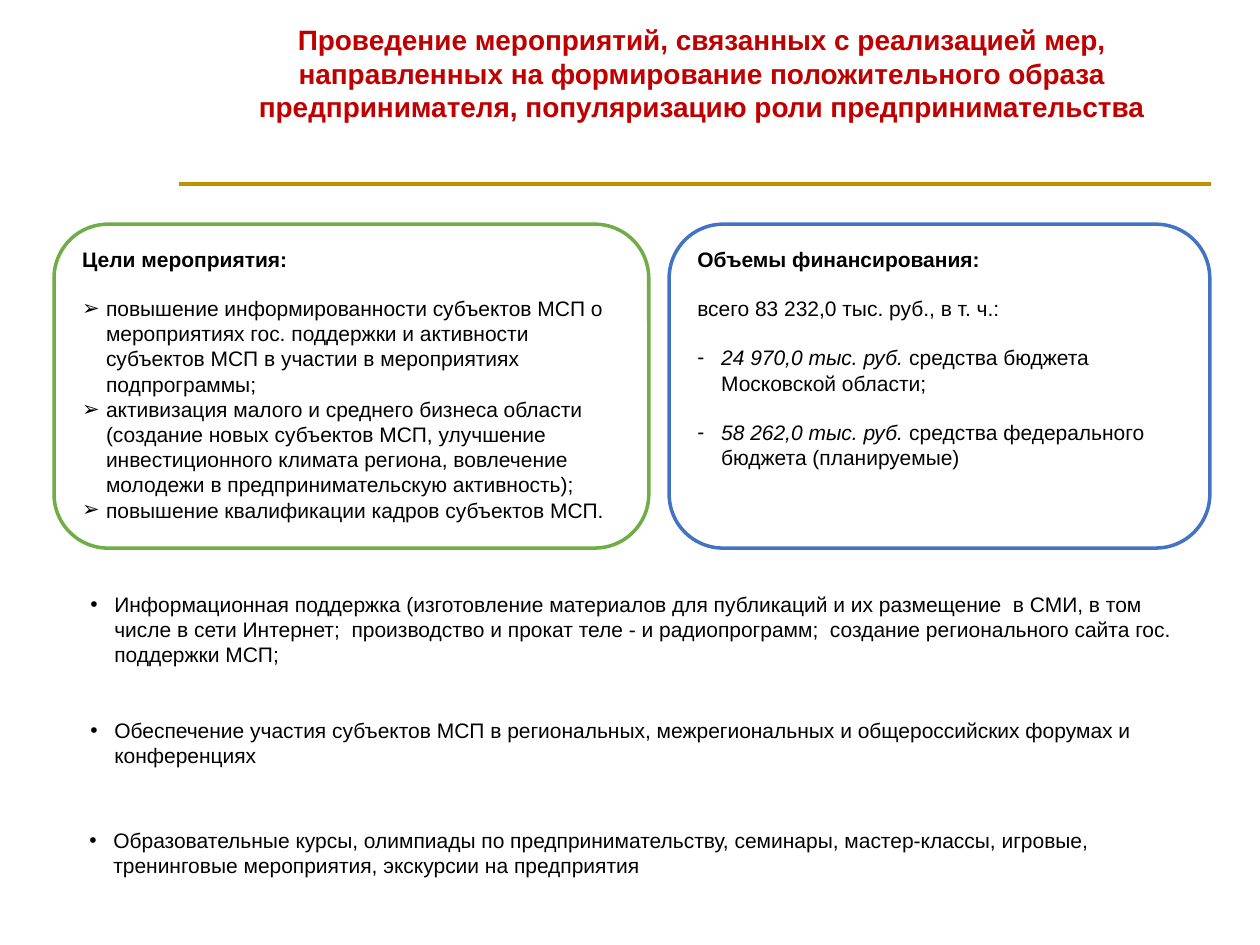
import pptx
import pptx.dml.color
import pptx.enum.shapes
import pptx.enum.text
import pptx.oxml.ns
import pptx.util
from lxml import etree

Cm = pptx.util.Cm
Pt = pptx.util.Pt
RGBColor = pptx.dml.color.RGBColor
qn = pptx.oxml.ns.qn

RED = RGBColor(0xC0, 0x00, 0x00)
GOLD = RGBColor(0xBF, 0x90, 0x00)
GREEN = RGBColor(0x70, 0xAD, 0x47)
BLUE = RGBColor(0x44, 0x72, 0xC4)
BLACK = RGBColor(0x00, 0x00, 0x00)
WHITE = RGBColor(0xFF, 0xFF, 0xFF)

TITLE = ("Проведение мероприятий, связанных с реализацией мер, направленных "
         "на формирование положительного образа предпринимателя, "
         "популяризацию роли предпринимательства")
GOALS = [
    "повышение информированности субъектов МСП о мероприятиях гос. поддержки "
    "и активности субъектов МСП в участии в мероприятиях подпрограммы;",
    "активизация малого и среднего бизнеса области (создание новых субъектов МСП, "
    "улучшение инвестиционного климата региона, вовлечение молодежи "
    "в предпринимательскую активность);",
    "повышение квалификации кадров субъектов МСП.",
]
FUNDS = [
    ("24 970,0 тыс. руб.", " средства бюджета Московской области;"),
    ("58 262,0 тыс. руб.", " средства федерального бюджета (планируемые)"),
]
ACTIVITIES = [
    (1.57, 11.79, 22.61, 1.8,
     "Информационная поддержка (изготовление материалов для публикаций "
     "и их размещение  в СМИ, в том числе в сети Интернет;  производство и прокат "
     "теле - и радиопрограмм;  создание регионального сайта гос. поддержки МСП;"),
    (1.57, 14.33, 21.79, 1.27,
     "Обеспечение участия субъектов МСП в региональных, межрегиональных "
     "и общероссийских форумах и конференциях"),
    (1.55, 16.56, 21.72, 1.27,
     "Образовательные курсы, олимпиады по предпринимательству, семинары, "
     "мастер-классы, игровые, тренинговые мероприятия, экскурсии на предприятия"),
]


class Deck:
    """Holds the text style and the current slide."""

    font = "Arial"
    size = Pt(12)
    gap = Pt(13.8)
    indent = Cm(0.48)

    def __init__(self, prs, layout):
        self.s = prs.slides.add_slide(prs.slide_layouts[layout])

    def style(self, p, size=None, color=BLACK, bold=False, align="LEFT", before=0):
        p.alignment = getattr(pptx.enum.text.PP_ALIGN, align)
        p.space_before = before
        for r in p.runs:
            r.font.name = self.font
            r.font.size = size or self.size
            r.font.bold = bold
            r.font.color.rgb = color

    def bullet(self, p, char):
        pPr = p._p.get_or_add_pPr()
        pPr.set("marL", str(self.indent))
        pPr.set("indent", str(-self.indent))
        etree.SubElement(pPr, qn("a:buFont"), typeface=self.font)
        etree.SubElement(pPr, qn("a:buChar"), char=char)

    def frame(self, sp):
        tf = sp.text_frame
        tf.word_wrap = True
        tf.auto_size = pptx.enum.text.MSO_AUTO_SIZE.NONE
        tf.vertical_anchor = pptx.enum.text.MSO_ANCHOR.TOP
        return tf

    def placeholder(self, idx, x, y, w, h, text, char=None, **style):
        sp = self.s.placeholders[idx]
        sp.left, sp.top, sp.width, sp.height = Cm(x), Cm(y), Cm(w), Cm(h)
        tf = self.frame(sp)
        tf.text = text
        p = tf.paragraphs[0]
        if char:
            self.bullet(p, char)
        self.style(p, **style)

    def remove(self, idx):
        el = self.s.placeholders[idx].element
        el.getparent().remove(el)

    def rule(self, x1, x2, y, color):
        ln = self.s.shapes.add_connector(
            pptx.enum.shapes.MSO_CONNECTOR.STRAIGHT, Cm(x1), Cm(y), Cm(x2), Cm(y))
        ln.line.color.rgb = color
        ln.line.width = Pt(2)
        etree.SubElement(ln.element.spPr, qn("a:effectLst"))

    def card(self, x, y, w, h, color, heading):
        sp = self.s.shapes.add_shape(
            pptx.enum.shapes.MSO_SHAPE.ROUNDED_RECTANGLE, Cm(x), Cm(y), Cm(w), Cm(h))
        sp.shadow.inherit = False
        sp.fill.solid()
        sp.fill.fore_color.rgb = WHITE
        sp.line.color.rgb = color
        sp.line.width = Pt(2)
        tf = self.frame(sp)
        tf.text = heading
        self.style(tf.paragraphs[0], bold=True)
        return tf

    def item(self, tf, text, char=None, lead="", before=0):
        p = tf.add_paragraph()
        p.text = lead or text
        if lead:
            p.runs[0].font.italic = True
            p.add_run().text = text
        if char:
            self.bullet(p, char)
        self.style(p, before=before)


def main():
    prs = pptx.Presentation()
    prs.slide_width, prs.slide_height = Cm(25.4), Cm(19.05)
    deck = Deck(prs, 4)
    deck.placeholder(0, 3.61, 0.33, 21.08, 2.31, TITLE,
                     size=Pt(16), color=RED, bold=True, align="CENTER")
    deck.rule(3.61, 24.41, 3.71, GOLD)

    goals = deck.card(1.09, 4.52, 11.99, 6.53, GREEN, "Цели мероприятия:")
    for i, text in enumerate(GOALS):
        deck.item(goals, text, "➢", before=0 if i else deck.gap)

    funds = deck.card(13.49, 4.52, 10.9, 6.53, BLUE, "Объемы финансирования:")
    deck.item(funds, "всего 83 232,0 тыс. руб., в т. ч.:", before=deck.gap)
    for amount, text in FUNDS:
        deck.item(funds, text, "-", lead=amount, before=deck.gap)

    for idx, (x, y, w, h, text) in enumerate(ACTIVITIES, 1):
        deck.placeholder(idx, x, y, w, h, text, "•")
    deck.remove(4)
    prs.save("out.pptx")


if __name__ == "__main__":
    main()
